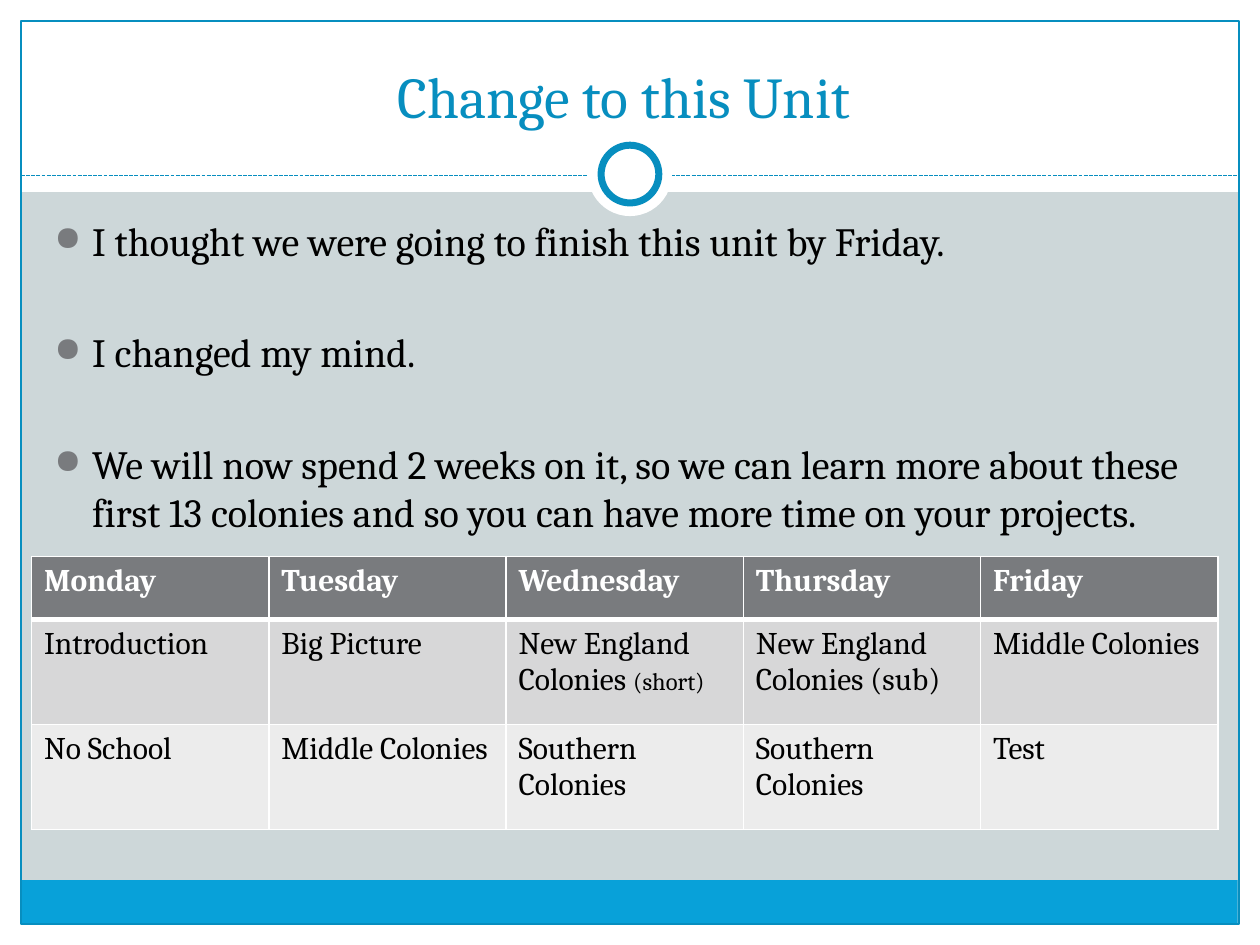
from lxml import etree
from pptx import Presentation
from pptx.dml.color import RGBColor
from pptx.enum import dml, shapes, text
from pptx.oxml import parse_xml
from pptx.oxml.ns import qn
from pptx.util import Pt

NS = 'xmlns:a="http://schemas.openxmlformats.org/drawingml/2006/main"'
WHITE, BLUE, GREY = "FFFFFF", "078EBF", "797B7E"
rgb = RGBColor.from_string


def add_run(p, words, size, color, bold=False):
    r = p.add_run()
    r.text = words
    r.font.color.rgb = rgb(color)
    for name, value in {"name": "Cambria", "size": Pt(size), "bold": bold}.items():
        setattr(r.font, name, value)


def add_text_box(x, y, w, h, anchor):
    tf = s.shapes.add_textbox(Pt(x), Pt(y), Pt(w), Pt(h)).text_frame
    for name, value in {"word_wrap": True, "vertical_anchor": anchor}.items():
        setattr(tf, name, value)
    return tf


prs = Presentation()
prs.slide_width, prs.slide_height = Pt(720), Pt(540)
s = prs.slides.add_slide(prs.slide_layouts[6])
s.background.fill.solid()
s.background.fill.fore_color.rgb = rgb("CDD7D9")

# White margins, footer band, frame, then the divider and its ring
RECT, OVAL = shapes.MSO_SHAPE.RECTANGLE, shapes.MSO_SHAPE.OVAL
for kind, x, y, w, h, fill, line in [
    (RECT, 0, 528, 720, 12, WHITE, None),
    (RECT, 0, 0, 720, 109.7, WHITE, None),
    (RECT, 0, 0, 12, 540, WHITE, None),
    (RECT, 708, 0, 12, 540, WHITE, None),
    (RECT, 11.75, 503, 695.5, 24.5, "08A1D9", None),
    (RECT, 12, 12, 696, 516, None, 0.75),
    (None, 12, 100.5, 696, 0, None, 0.75),
    (OVAL, 336, 75.5, 48, 48, WHITE, None),
    (OVAL, 343.5, 83, 33, 33, WHITE, 4),
]:
    if kind is None:
        sp = s.shapes.add_connector(
            shapes.MSO_CONNECTOR.STRAIGHT, Pt(x), Pt(y), Pt(x + w), Pt(y + h))
        sp.line.dash_style = dml.MSO_LINE.SQUARE_DOT
    else:
        sp = s.shapes.add_shape(kind, Pt(x), Pt(y), Pt(w), Pt(h))
        sp.shadow.inherit = False
        if fill:
            sp.fill.solid()
            sp.fill.fore_color.rgb = rgb(fill)
        else:
            sp.fill.background()
    if line:
        sp.line.color.rgb = rgb(BLUE)
        sp.line.width = Pt(line)
    else:
        sp.line.fill.background()
    if kind is None:
        etree.SubElement(sp._element.spPr, qn("a:effectLst"))

# Title
p = add_text_box(24, 18, 672, 60, text.MSO_ANCHOR.BOTTOM).paragraphs[0]
p.alignment = text.PP_ALIGN.CENTER
add_run(p, "Change to this Unit ", 33, BLUE)

# Bulleted text
tf = add_text_box(24, 120, 669.6, 198, text.MSO_ANCHOR.TOP)
for i, words in enumerate([
    "I thought we were going to finish this unit by Friday.",
    "I changed my mind.",
    "We will now spend 2 weeks on it, so we can learn more about these "
    "first 13 colonies and so you can have more time on your projects.",
]):
    p = tf.add_paragraph() if i else tf.paragraphs[0]
    p.space_before = Pt(36.3 if i else 0)
    add_run(p, words, 22.9, "000000")
    pPr = p._p.get_or_add_pPr()
    pPr.set("marL", str(Pt(21.6)))
    pPr.set("indent", str(-Pt(21.6)))
    for xml in (f'<a:buClr {NS}><a:srgbClr val="{GREY}"/></a:buClr>',
                f'<a:buSzPct {NS} val="85000"/>',
                f'<a:buChar {NS} char="●"/>'):
        pPr.append(parse_xml(xml))

# Two-week schedule
rows = [
    ["Monday", "Tuesday", "Wednesday", "Thursday", "Friday"],
    ["Introduction", "Big Picture", "New England Colonies (short)",
     "New England Colonies (sub)", "Middle Colonies"],
    ["No School", "Middle Colonies", "Southern Colonies", "Southern Colonies", "Test"],
]
table = s.shapes.add_table(3, 5, Pt(18), Pt(318), Pt(678), Pt(156)).table
for i, (words, height, fill) in enumerate(
        zip(rows, (36, 60, 60), (GREY, "D7D7D8", "ECECEC"))):
    table.rows[i].height = Pt(height)
    for j, label in enumerate(words):
        cell = table.cell(i, j)
        main, note, _ = label.partition("(short)")
        p = cell.text_frame.paragraphs[0]
        add_run(p, main, 18, "000000" if i else WHITE, bold=i == 0)
        if note:
            add_run(p, note, 14, "000000")
        tcPr = cell._tc.get_or_add_tcPr()
        for side in "LRTB":
            thick = (side, i) in (("B", 0), ("T", 1))
            tcPr.append(parse_xml(
                f'<a:ln{side} {NS} w="{Pt(3 if thick else 1)}"><a:solidFill>'
                f'<a:srgbClr val="{WHITE}"/></a:solidFill></a:ln{side}>'))
        cell.fill.solid()
        cell.fill.fore_color.rgb = rgb(fill)

prs.save("out.pptx")
